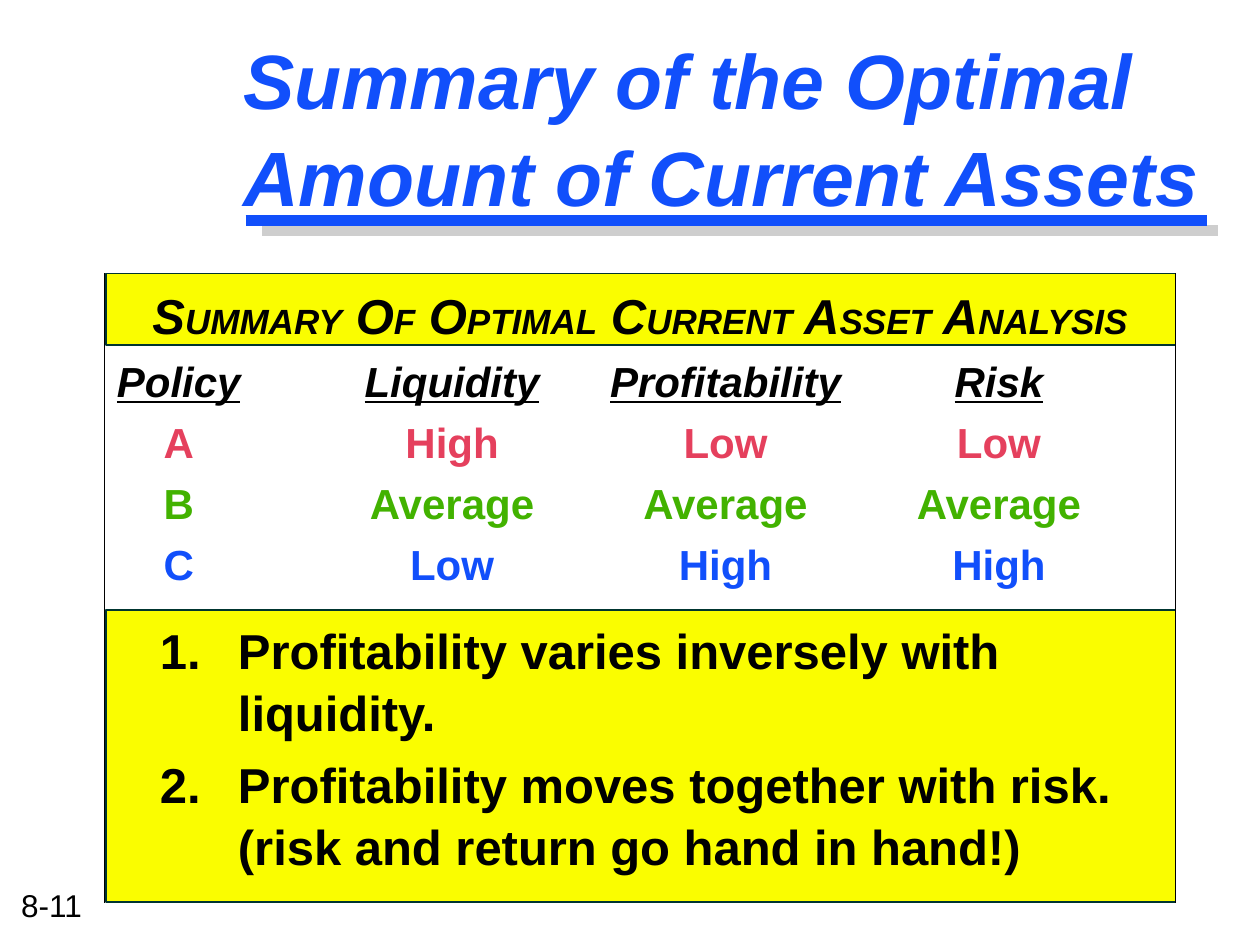
from lxml import etree
from pptx import Presentation
from pptx import util as u
from pptx.dml.color import RGBColor
from pptx.enum import shapes, text
from pptx.oxml.ns import qn

BLACK = RGBColor(0x00, 0x00, 0x00)
BLUE = RGBColor(0x11, 0x4F, 0xFB)
RED = RGBColor(0xE5, 0x40, 0x5D)
GREEN = RGBColor(0x42, 0xB2, 0x00)
GREY = RGBColor(0xCE, 0xCE, 0xCE)
YELLOW = RGBColor(0xFA, 0xFD, 0x00)
DARK_GREEN = RGBColor(0x00, 0x35, 0x30)

LEFT, RIGHT = 0.83, 9.33
TOP, MIDDLE, BOTTOM = 2.17, 4.84, 7.17
COLUMN_CENTRES = [0.49, 2.66, 4.83, 7.0]


def write(paragraph, words, size=28, color=BLACK, bold=True, italic=False, underline=False):
    run = paragraph.add_run()
    run.text = words
    font = run.font
    font.name = "Arial"
    font.size = u.Pt(size)
    font.bold, font.italic, font.underline = bold, italic, underline
    font.color.rgb = color


def draw_line(x1, y1, x2, y2, color, width):
    line = slide.shapes.add_connector(
        shapes.MSO_CONNECTOR.STRAIGHT, u.Inches(x1), u.Inches(y1), u.Inches(x2), u.Inches(y2))
    line.line.color.rgb = color
    line.line.width = u.Pt(width)
    etree.SubElement(line._element.spPr, qn("a:effectLst"))


deck = Presentation()
deck.slide_width, deck.slide_height = u.Inches(10), u.Inches(7.5)
slide = deck.slides.add_slide(deck.slide_layouts[5])

title = slide.shapes.title
title.left, title.top = u.Inches(1.83), u.Inches(0.06)
title.width, title.height = u.Inches(8.1), u.Inches(1.86)
title.text_frame.auto_size = text.MSO_AUTO_SIZE.NONE
title.text_frame.vertical_anchor = text.MSO_ANCHOR.MIDDLE
headline = title.text_frame.paragraphs[0]
headline.alignment = text.PP_ALIGN.LEFT
headline.line_spacing = 1.05
write(headline, "Summary of the Optimal Amount of Current Assets", size=44, color=BLUE, italic=True)

draw_line(2.08, 1.83, 9.67, 1.83, GREY, 6)
draw_line(1.95, 1.75, 9.58, 1.75, BLUE, 6)

panels = []
for top, height in [(TOP, 0.57), (MIDDLE, 2.32)]:
    panel = slide.shapes.add_shape(
        shapes.MSO_SHAPE.RECTANGLE, u.Inches(0.84), u.Inches(top), u.Inches(8.49), u.Inches(height))
    panel.shadow.inherit = False
    panel.fill.solid()
    panel.fill.fore_color.rgb = YELLOW
    panel.line.color.rgb = DARK_GREEN
    panel.line.width = u.Pt(1)
    panels.append(panel)

analysis = slide.shapes.add_textbox(
    u.Inches(LEFT), u.Inches(TOP), u.Inches(RIGHT - LEFT), u.Inches(MIDDLE - TOP)).text_frame
analysis.word_wrap = True
analysis.margin_top = u.Inches(0.07)
caption = analysis.paragraphs[0]
caption.alignment = text.PP_ALIGN.CENTER
caption.line_spacing = 1.05
caption.space_after = u.Pt(3)
for index, word in enumerate("SUMMARY OF OPTIMAL CURRENT ASSET ANALYSIS".split()):
    write(caption, (" " if index else "") + word[0], italic=True)
    write(caption, word[1:], size=20, italic=True)

policies = [
    (BLACK, ["Policy", "Liquidity", "Profitability", "Risk"]),
    (RED, ["A", "High", "Low", "Low"]),
    (GREEN, ["B", "Average", "Average", "Average"]),
    (BLUE, ["C", "Low", "High", "High"]),
]
for row, (color, values) in enumerate(policies):
    line = analysis.add_paragraph()
    stops = etree.SubElement(line._p.get_or_add_pPr(), qn("a:tabLst"))
    for centre in COLUMN_CENTRES:
        etree.SubElement(stops, qn("a:tab"), pos=str(u.Inches(centre)), algn="ctr")
    line.line_spacing = 1.05
    line.space_before = line.space_after = u.Pt(2.3)
    for value in values:
        write(line, "\t", size=24, color=color)
        write(line, value, size=24, color=color, italic=row == 0, underline=row == 0)

findings = panels[1].text_frame
findings.word_wrap = True
findings.vertical_anchor = text.MSO_ANCHOR.TOP
findings.margin_top = u.Inches(0.06)
conclusions = [
    ("Profitability varies inversely with liquidity.", True, 0, 3),
    ("Profitability moves together with risk.", True, 3, 0),
    ("(risk and return go hand in hand!)", False, 0, 0),
]
for index, (words, numbered, before, after) in enumerate(conclusions):
    point = findings.add_paragraph() if index else findings.paragraphs[0]
    layout = point._p.get_or_add_pPr()
    layout.set("marL", str(u.Inches(0.95)))
    layout.set("indent", str(u.Inches(-0.62 if numbered else 0)))
    if numbered:
        etree.SubElement(layout, qn("a:buFont"), typeface="Arial")
        etree.SubElement(layout, qn("a:buAutoNum"), type="arabicPeriod")
    point.alignment = text.PP_ALIGN.LEFT
    point.line_spacing = 1.05
    point.space_before, point.space_after = u.Pt(before), u.Pt(after)
    write(point, words)

for x in (LEFT, RIGHT):
    draw_line(x, TOP, x, BOTTOM, BLACK, 1)

page = slide.shapes.add_textbox(u.Inches(0.07), u.Inches(6.98), u.Inches(0.73), u.Inches(0.4))
page.text_frame.word_wrap = False
write(page.text_frame.paragraphs[0], "8-11", size=18, bold=False)

deck.save("out.pptx")
